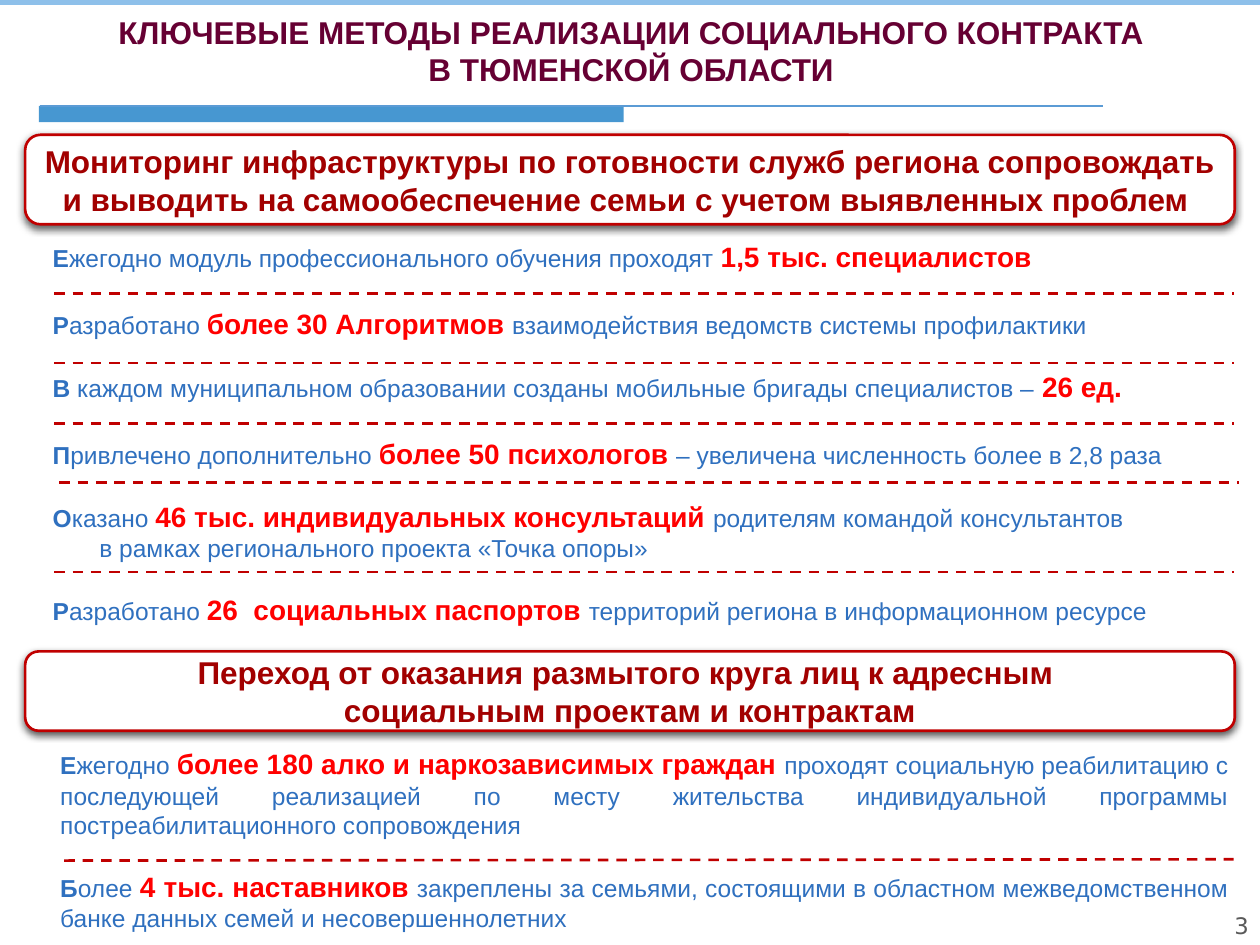
from lxml import etree
from pptx import Presentation
from pptx import util as u
from pptx.dml.color import RGBColor
from pptx.enum import dml, shapes, text
from pptx.oxml import parse_xml
from pptx.oxml.ns import nsdecls, qn

RED, BRIGHT_RED, BLUE = "C00000", "FF0000", "2F70BF"


def color(value):
    return RGBColor.from_string(value)


def add_lines(frame, lines, size, value, alignment, name="Arial", bold=True):
    """Fill a text frame with evenly formatted paragraphs."""
    frame.word_wrap = True
    for index, line in enumerate(lines):
        paragraph = frame.paragraphs[0] if index == 0 else frame.add_paragraph()
        paragraph.text = line
        paragraph.alignment = alignment
        paragraph.font.size = u.Pt(size)
        paragraph.font.name = name
        paragraph.font.bold = bold
        paragraph.font.color.rgb = color(value)


presentation = Presentation()
presentation.slide_width = u.Inches(10)
presentation.slide_height = u.Inches(7.5)
slide = presentation.slides.add_slide(presentation.slide_layouts[6])

# Accent bar under the title and strip along the top edge
for left, top, width, height, value, alpha in [
    (0.31, 0.84, 4.64, 0.13, "0070C0", 72),
    (0, -0.03, 10, 0.07, "8EC0EA", 100),
]:
    bar = slide.shapes.add_shape(
        shapes.MSO_SHAPE.RECTANGLE,
        u.Inches(left), u.Inches(top), u.Inches(width), u.Inches(height))
    bar.shadow.inherit = False
    bar.fill.solid()
    bar.fill.fore_color.rgb = color(value)
    bar.line.fill.background()
    if alpha < 100:
        fill_color = bar._element.spPr.find(qn("a:solidFill"))[0]
        etree.SubElement(fill_color, qn("a:alpha"), val=str(alpha * 1000))

# Title and page number
title = slide.shapes.add_textbox(
    u.Inches(0.01), u.Inches(0.05), u.Inches(10), u.Inches(0.65))
add_lines(title.text_frame,
          ["КЛЮЧЕВЫЕ МЕТОДЫ РЕАЛИЗАЦИИ СОЦИАЛЬНОГО КОНТРАКТА",
           "В ТЮМЕНСКОЙ ОБЛАСТИ"], 18, "660033", text.PP_ALIGN.CENTER)

page_number = slide.shapes.add_textbox(
    u.Inches(9.29), u.Inches(7.2), u.Inches(0.71), u.Inches(0.3))
frame = page_number.text_frame
frame.margin_left = frame.margin_right = u.Inches(0.09)
frame.margin_top = frame.margin_bottom = u.Inches(0.04)
add_lines(frame, ["3"], 13, "595959", text.PP_ALIGN.RIGHT, "DejaVu Sans", False)

# Section banners
for top, height, lines in [
    (1.07, 0.71, ["Мониторинг инфраструктуры по готовности служб региона сопровождать "
                  "и выводить на самообеспечение семьи с учетом выявленных проблем "]),
    (5.17, 0.63, ["Переход от оказания размытого круга лиц к адресным ",
                  "социальным проектам и контрактам"]),
]:
    banner = slide.shapes.add_shape(
        shapes.MSO_SHAPE.ROUNDED_RECTANGLE,
        u.Inches(0.2), u.Inches(top), u.Inches(9.6), u.Inches(height))
    banner.adjustments[0] = 0.17
    banner.fill.solid()
    banner.fill.fore_color.rgb = color("FFFFFF")
    banner.line.color.rgb = color(RED)
    banner.line.width = u.Pt(1.5)
    banner.shadow.inherit = False
    effects = banner._element.spPr.find(qn("a:effectLst"))
    effects.append(parse_xml(
        f'<a:outerShdw {nsdecls("a")} blurRad="{u.Pt(4.5)}" dist="{u.Pt(1.5)}" '
        'dir="5400000" algn="ctr" rotWithShape="0">'
        '<a:srgbClr val="000000"><a:alpha val="63000"/></a:srgbClr></a:outerShdw>'))
    banner.text_frame.vertical_anchor = text.MSO_ANCHOR.MIDDLE
    add_lines(banner.text_frame, lines, 18, "A20000", text.PP_ALIGN.CENTER)

# Fact lists: gap before (points), bold initial, plain start, highlight, plain end
monitoring_facts = [
    (0, "Е", "жегодно модуль профессионального обучения проходят ",
     "1,5 тыс. специалистов", ""),
    (19, "Р", "азработано ", "более 30 Алгоритмов ",
     "взаимодействия ведомств системы профилактики"),
    (17, "В ", "каждом муниципальном образовании созданы мобильные бригады специалистов – ",
     "26 ед.", ""),
    (19, "П", "ривлечено дополнительно ", "более 50 психологов ",
     "– увеличена численность более в 2,8 раза"),
    (17, "О", "казано ", "46 тыс. индивидуальных консультаций ",
     "родителям командой консультантов"),
    (0, "", "в рамках регионального проекта «Точка опоры»", "", ""),
    (17, "Р", "азработано ", "26  социальных паспортов ",
     "территорий региона в информационном ресурсе"),
]
project_facts = [
    (0, "Е", "жегодно ", "более 180 алко и наркозависимых граждан ",
     "проходят социальную реабилитацию с последующей реализацией по месту "
     "жительства индивидуальной программы постреабилитационного сопровождения"),
    (17, "Б", "олее ", "4 тыс. наставников ",
     "закреплены за семьями, состоящими в областном межведомственном "
     "банке данных семей и несовершеннолетних"),
]
run_styles = [(14, True, BLUE), (14, False, BLUE), (16, True, BRIGHT_RED), (14, False, BLUE)]

for left, top, height, facts in [
    (0.32, 1.85, 3.16, monitoring_facts),
    (0.38, 5.88, 1.56, project_facts),
]:
    fact_box = slide.shapes.add_textbox(
        u.Inches(left), u.Inches(top), u.Inches(9.47), u.Inches(height))
    frame = fact_box.text_frame
    frame.word_wrap = True
    for index, (gap, *parts) in enumerate(facts):
        paragraph = frame.paragraphs[0] if index == 0 else frame.add_paragraph()
        paragraph.alignment = text.PP_ALIGN.JUSTIFY
        paragraph.space_before = u.Pt(gap)
        paragraph.font.name = "Arial"
        if not parts[0]:  # continuation line is indented
            paragraph._p.get_or_add_pPr().set("marL", str(u.Inches(0.37)))
        for part, (size, bold, value) in zip(parts, run_styles):
            if part:
                run = paragraph.add_run()
                run.text = part
                run.font.size = u.Pt(size)
                run.font.bold = bold
                run.font.color.rgb = color(value)

# Title rule and dashed separators
title_rule = (0.32, 8.75, 0.84, 0.84, "5B9BD5", 1, None)
separators = [
    (start, end, top, bottom, RED, 1.5, dml.MSO_LINE.DASH)
    for start, end, top, bottom in [
        (0.43, 9.79, 2.33, 2.33), (0.43, 9.79, 2.88, 2.88), (0.43, 9.79, 3.36, 3.36),
        (0.47, 9.83, 3.83, 3.83), (0.43, 9.79, 4.54, 4.54), (0.51, 9.79, 6.83, 6.82)]
]
for start, end, top, bottom, value, width, dash in [title_rule, *separators]:
    line = slide.shapes.add_connector(
        shapes.MSO_CONNECTOR.STRAIGHT,
        u.Inches(start), u.Inches(top), u.Inches(end), u.Inches(bottom))
    line.line.color.rgb = color(value)
    line.line.width = u.Pt(width)
    if dash:
        line.line.dash_style = dash
    etree.SubElement(line._element.spPr, qn("a:effectLst"))

presentation.save("out.pptx")
